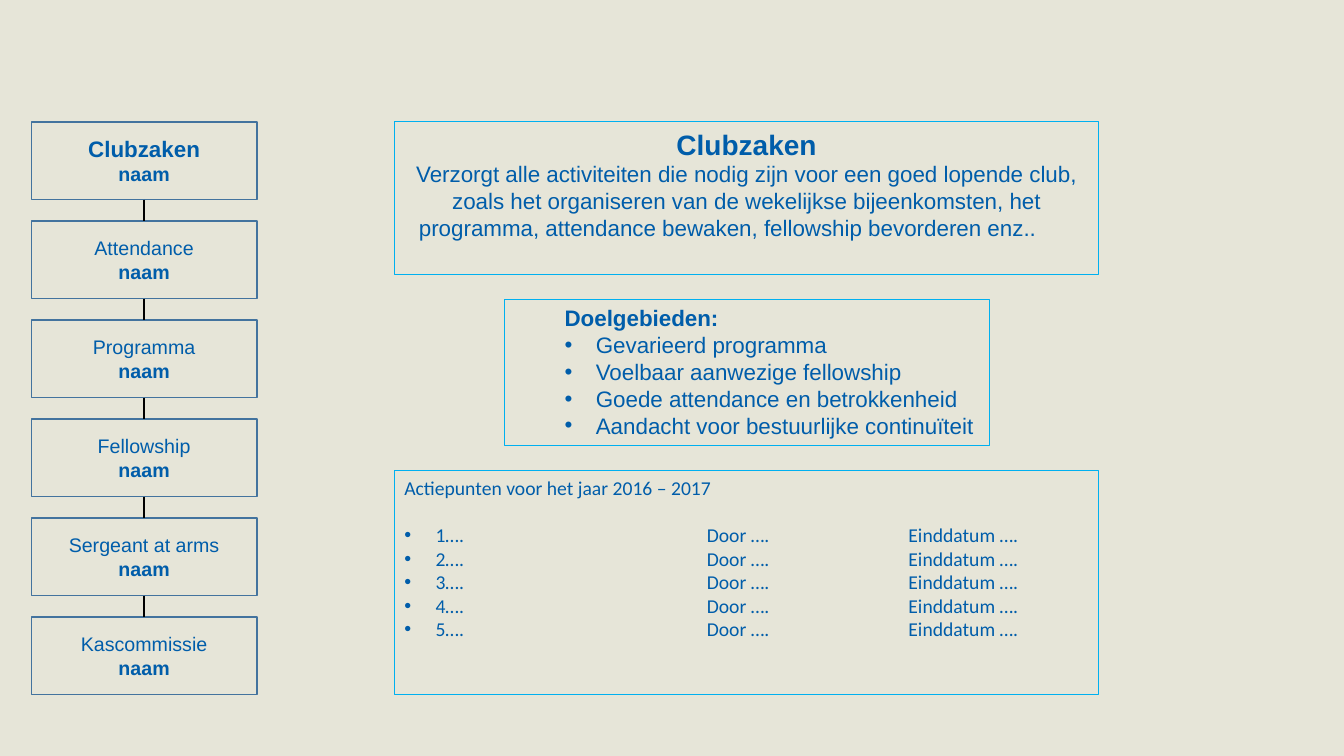
from lxml.etree import SubElement
from pptx import Presentation
from pptx.dml.color import RGBColor
from pptx.enum.shapes import MSO_CONNECTOR, MSO_SHAPE
from pptx.enum.text import MSO_ANCHOR, MSO_AUTO_SIZE, PP_ALIGN
from pptx.oxml.ns import qn
from pptx.util import Inches, Pt

COLORS = {
    "background": "E6E5D8",
    "text": "005DAA",
    "panel": "00B0F0",
    "role": "43739E",
    "link": "000000",
}
ROLES = ["Clubzaken", "Attendance", "Programma", "Fellowship", "Sergeant at arms", "Kascommissie"]
GOALS = [
    "Gevarieerd programma",
    "Voelbaar aanwezige fellowship",
    "Goede attendance en betrokkenheid",
    "Aandacht voor bestuurlijke continuïteit",
]
ACTIONS = [f"{number}….\tDoor ….\tEinddatum …." for number in range(1, 6)]
PURPOSE = (
    "Verzorgt alle activiteiten die nodig zijn voor een goed lopende club, "
    "zoals het organiseren van de wekelijkse bijeenkomsten, het programma, "
    "attendance bewaken, fellowship bevorderen enz..\t"
)


def rgb(name):
    """Return the named colour."""
    return RGBColor.from_string(COLORS[name])


def format_paragraph(paragraph, size, bold=False, font="Arial", align=PP_ALIGN.LEFT):
    """Set the font and alignment of a whole paragraph."""
    paragraph.alignment = align
    paragraph.line_spacing = 1.0
    paragraph.space_before = Pt(0)
    paragraph.font.name = font
    paragraph.font.size = Pt(size)
    paragraph.font.bold = bold
    paragraph.font.color.rgb = rgb("text")


def set_indent(paragraph, left, bullet=False, tabs=()):
    """Set the left margin, bullet and tab stops of a paragraph."""
    properties = paragraph._p.get_or_add_pPr()
    hanging = 0.31 if bullet else 0
    properties.set("marL", str(Inches(left + hanging)))
    properties.set("indent", str(Inches(-hanging)))
    if bullet:
        SubElement(properties, qn("a:buFont"), typeface="Arial")
        SubElement(properties, qn("a:buChar"), char="•")
    else:
        SubElement(properties, qn("a:buNone"))
    if tabs:
        stops = SubElement(properties, qn("a:tabLst"))
        for position in tabs:
            SubElement(stops, qn("a:tab"), pos=str(Inches(position)), algn="l")


def frame_panel(shape, left, top, width, height):
    """Place a placeholder as an outlined panel and return its text frame."""
    shape.left, shape.top = Inches(left), Inches(top)
    shape.width, shape.height = Inches(width), Inches(height)
    shape.fill.background()
    shape.line.color.rgb = rgb("panel")
    shape.line.width = Pt(0.75)
    frame = shape.text_frame
    frame.word_wrap = True
    frame.auto_size = MSO_AUTO_SIZE.NONE
    frame.vertical_anchor = MSO_ANCHOR.TOP
    return frame


def fill_purpose(shape, left, top, width, height):
    """Write the committee name and its purpose."""
    frame = frame_panel(shape, left, top, width, height)
    frame.text = f"Clubzaken\n{PURPOSE}"
    heading, purpose = frame.paragraphs
    format_paragraph(heading, 20, bold=True, align=PP_ALIGN.CENTER)
    format_paragraph(purpose, 16, align=PP_ALIGN.CENTER)


def fill_list(shape, box, heading, items, size, font, left=0, bold=False, gap=0, tabs=()):
    """Write a heading with a bulleted list below it."""
    frame = frame_panel(shape, *box)
    frame.text = "\n".join([heading, *items])
    first, *bullets = frame.paragraphs
    set_indent(first, left)
    format_paragraph(first, size, bold, font)
    first.space_after = Pt(gap)
    for paragraph in bullets:
        set_indent(paragraph, left, bullet=True, tabs=tabs)
        format_paragraph(paragraph, size, font=font)


def add_role(slide, role, is_head, left, top, width, height):
    """Add one box of the organisation column."""
    shape = slide.shapes.add_shape(
        MSO_SHAPE.RECTANGLE, Inches(left), Inches(top), Inches(width), Inches(height)
    )
    shape.shadow.inherit = False
    shape.fill.background()
    shape.line.color.rgb = rgb("role")
    shape.line.width = Pt(1)
    frame = shape.text_frame
    frame.word_wrap = True
    frame.vertical_anchor = MSO_ANCHOR.MIDDLE
    frame.text = f"{role}\nnaam"
    title, person = frame.paragraphs
    format_paragraph(title, 16 if is_head else 14, bold=is_head, align=PP_ALIGN.CENTER)
    format_paragraph(person, 14, bold=True, align=PP_ALIGN.CENTER)
    return shape


def add_organisation(slide, left, top, width, height, role_height=0.77):
    """Stack the roles evenly and link each one to the next."""
    pitch = (height - role_height) / (len(ROLES) - 1)
    boxes = [
        add_role(slide, role, index == 0, left, top + index * pitch, width, role_height)
        for index, role in enumerate(ROLES)
    ]
    for upper, lower in zip(boxes, boxes[1:]):
        link = slide.shapes.add_connector(MSO_CONNECTOR.STRAIGHT, 0, 0, 0, 0)
        link.begin_connect(upper, 2)
        link.end_connect(lower, 0)
        link.line.color.rgb = rgb("link")
        link.line.width = Pt(1)
        SubElement(link._element.spPr, qn("a:effectLst"))


def main():
    """Build and save the slide."""
    presentation = Presentation()
    presentation.slide_width, presentation.slide_height = Inches(13.33), Inches(7.5)
    slide = presentation.slides.add_slide(presentation.slide_layouts.get_by_name("Two Content"))
    slide.background.fill.solid()
    slide.background.fill.fore_color.rgb = rgb("background")
    purpose, goals, actions = slide.placeholders
    fill_purpose(purpose, 3.91, 1.21, 6.99, 1.51)
    fill_list(goals, (5, 2.97, 4.81, 1.45), "Doelgebieden:", GOALS, 16, "Arial", left=0.5, bold=True)
    fill_list(
        actions, (3.91, 4.67, 6.99, 2.22), "Actiepunten voor het jaar 2016 – 2017",
        ACTIONS, 14, "Calibri", gap=17, tabs=(3, 5),
    )
    add_organisation(slide, 0.31, 1.21, 2.24, 5.68)
    presentation.save("out.pptx")


if __name__ == "__main__":
    main()
